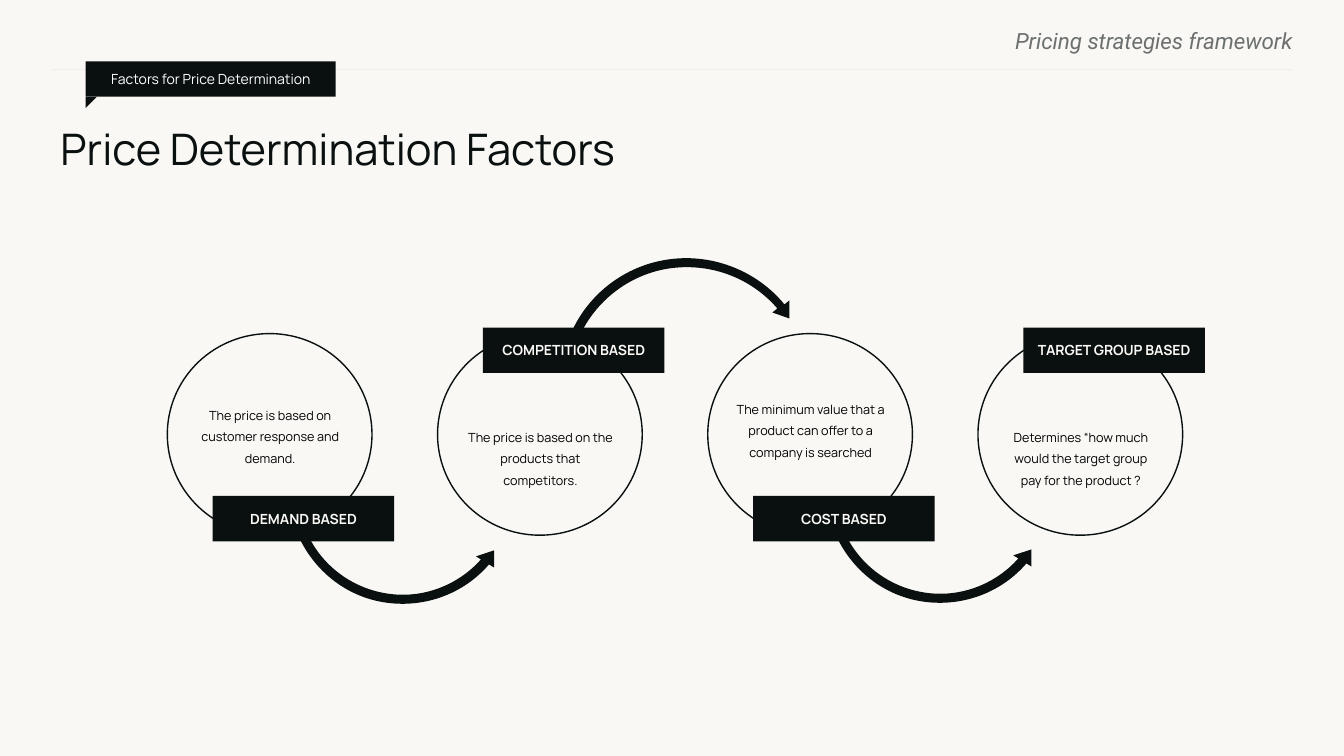
from lxml import etree
from pptx import Presentation
from pptx.dml.color import RGBColor
from pptx.enum.shapes import MSO_CONNECTOR, MSO_SHAPE as SHAPE
from pptx.enum.text import MSO_ANCHOR as ANCHOR, MSO_AUTO_SIZE, PP_ALIGN as ALIGN
from pptx.oxml.ns import qn
from pptx.util import Inches, Pt

INK = RGBColor(0x09, 0x10, 0x0F)
PAPER = RGBColor(0xF9, 0xF8, 0xF5)
GREY = RGBColor(0x6C, 0x70, 0x6F)
RULE = RGBColor(0xEF, 0xEF, 0xEF)
WHITE = RGBColor(0xFF, 0xFF, 0xFF)
BLACK = RGBColor(0x00, 0x00, 0x00)

prs = Presentation()
prs.slide_width, prs.slide_height = Inches(13.33), Inches(7.5)
s = prs.slides.add_slide(prs.slide_layouts[5])
s.background.fill.solid()
s.background.fill.fore_color.rgb = PAPER


def style(sp, fill, line=None):
    sp.shadow.inherit = False
    sp.fill.solid()
    sp.fill.fore_color.rgb = fill
    if line is None:
        sp.line.fill.background()
    else:
        sp.line.color.rgb = line
        sp.line.width = Pt(1)


def write(sp, text, size, color, align=ALIGN.CENTER, anchor=ANCHOR.MIDDLE,
          margins=(0, 0, 0, 0), font="Manrope", bold=False, italic=False):
    tf = sp.text_frame
    tf.word_wrap = True
    tf.auto_size = MSO_AUTO_SIZE.NONE
    tf.vertical_anchor = anchor
    tf.margin_left, tf.margin_top, tf.margin_right, tf.margin_bottom = map(Inches, margins)
    p = tf.paragraphs[0]
    p.alignment = align
    r = p.add_run()
    r.text = text
    r.font.name, r.font.size = font, Pt(size)
    r.font.bold, r.font.italic = bold, italic
    r.font.color.rgb = color
    return p


# Running header and rule
header = s.shapes.add_textbox(Inches(7.68), Inches(0.27), Inches(5.14), Inches(0.24))
write(header, "Pricing strategies framework", 16, GREY, ALIGN.RIGHT, ANCHOR.TOP,
      font="Roboto", italic=True)
rule = s.shapes.add_connector(MSO_CONNECTOR.STRAIGHT, Inches(12.82), Inches(0.69),
                              Inches(0.52), Inches(0.69))
rule.line.color.rgb = RULE
rule.line.width = Pt(0.75)
etree.SubElement(rule._element.spPr, qn("a:effectLst"))

# Section tag with folded corner
tag = s.shapes.add_shape(SHAPE.RECTANGLE, Inches(0.85), Inches(0.61), Inches(2.48), Inches(0.35))
style(tag, INK)
write(tag, "Factors for Price Determination", 10, WHITE, margins=(0.1, 0.05, 0.1, 0.05))
fold = s.shapes.add_shape(SHAPE.RIGHT_TRIANGLE, Inches(0.85), Inches(0.96),
                          Inches(0.11), Inches(0.11))
fold.rotation = 90
style(fold, INK)

# Title
title = s.shapes.title
title.left, title.top, title.width, title.height = map(Inches, (0.6, 1.21, 12.2, 0.68))
p = write(title, "Price Determination Factors", 31, INK, ALIGN.LEFT, ANCHOR.TOP)
p.space_after = Pt(13)

# Arrow outlines in hundredths of an inch: one point is a line, three are a curve
SAGGING = [[(17, 168)], [(25, 164)],
           [(40, 196), (70, 218), (105, 223)], [(139, 228), (174, 215), (197, 189)],
           [(192, 186)], [(210, 180)], [(210, 197)], [(205, 194)],
           [(180, 223), (142, 237), (104, 232)], [(66, 227), (34, 203), (17, 168)]]
RISING = [[(19, 77)],
          [(37, 39), (74, 12), (117, 7)], [(159, 2), (202, 19), (229, 52)],
          [(234, 48)], [(234, 66)], [(217, 60)], [(222, 56)],
          [(196, 26), (157, 11), (117, 16)], [(78, 21), (44, 46), (27, 81)]]

# Factors: label, description, label top, text top, text height, top inset,
# arrow (left, top, size in hundredths, outline)
FACTORS = [
    ("DEMAND BASED", "The price is based on customer response and demand.",
     4.92, 3.56, 1.08, 0.4, (2.8, 3.66, 239, SAGGING)),
    ("COMPETITION BASED", "The price is based on the products that competitors.",
     3.25, 3.78, 1.48, 0, (5.49, 2.5, 265, RISING)),
    ("COST BASED", "The minimum value that a product can offer to a company is searched",
     4.92, 3.35, 1.48, 0.3, (8.13, 3.65, 239, SAGGING)),
    ("TARGET GROUP BASED", "Determines “how much would the target group pay for the product ?",
     3.25, 3.78, 1.48, 0, None),
]

for i, (name, text, label_top, text_top, text_height, inset, arrow) in enumerate(FACTORS):
    left = 1.66 + 2.68 * i
    circle = s.shapes.add_shape(SHAPE.OVAL, Inches(left), Inches(3.31), Inches(2.03), Inches(2))
    style(circle, PAPER, INK)
    if arrow:
        color = circle._element.spPr.find(qn("a:solidFill"))[0]
        etree.SubElement(color, qn("a:alpha"), val="90000")

    body = s.shapes.add_textbox(Inches(left + 0.05), Inches(text_top),
                                Inches(1.94), Inches(text_height))
    p = write(body, text, 9, BLACK, margins=(0.2, inset, 0.2, 0))
    p.line_spacing = 1.42

    # Curved arrow: square frame first, then its outline
    if arrow:
        arrow_left, arrow_top, size, outline = arrow
        builder = s.shapes.build_freeform(0, 0, scale=Inches(0.01))
        builder.add_line_segments([(size, 0), (size, size), (0, size)])
        sp = builder.convert_to_shape(Inches(arrow_left), Inches(arrow_top))
        style(sp, INK)
        contour = next(sp._element.iter(qn("a:path")))
        for segment in list(contour):
            contour.remove(segment)
        for n, points in enumerate(outline):
            kind = "a:cubicBezTo" if len(points) == 3 else "a:lnTo" if n else "a:moveTo"
            segment = etree.SubElement(contour, qn(kind))
            for x, y in points:
                etree.SubElement(segment, qn("a:pt"), x=str(x), y=str(y))
        etree.SubElement(contour, qn("a:close"))

    label = s.shapes.add_shape(SHAPE.RECTANGLE, Inches(left + 0.45), Inches(label_top),
                               Inches(1.8), Inches(0.45))
    style(label, INK)
    p = write(label, name, 10, PAPER, margins=(0, 0.02, 0, 0), bold=True)
    p.line_spacing = 0.9

prs.save("out.pptx")
